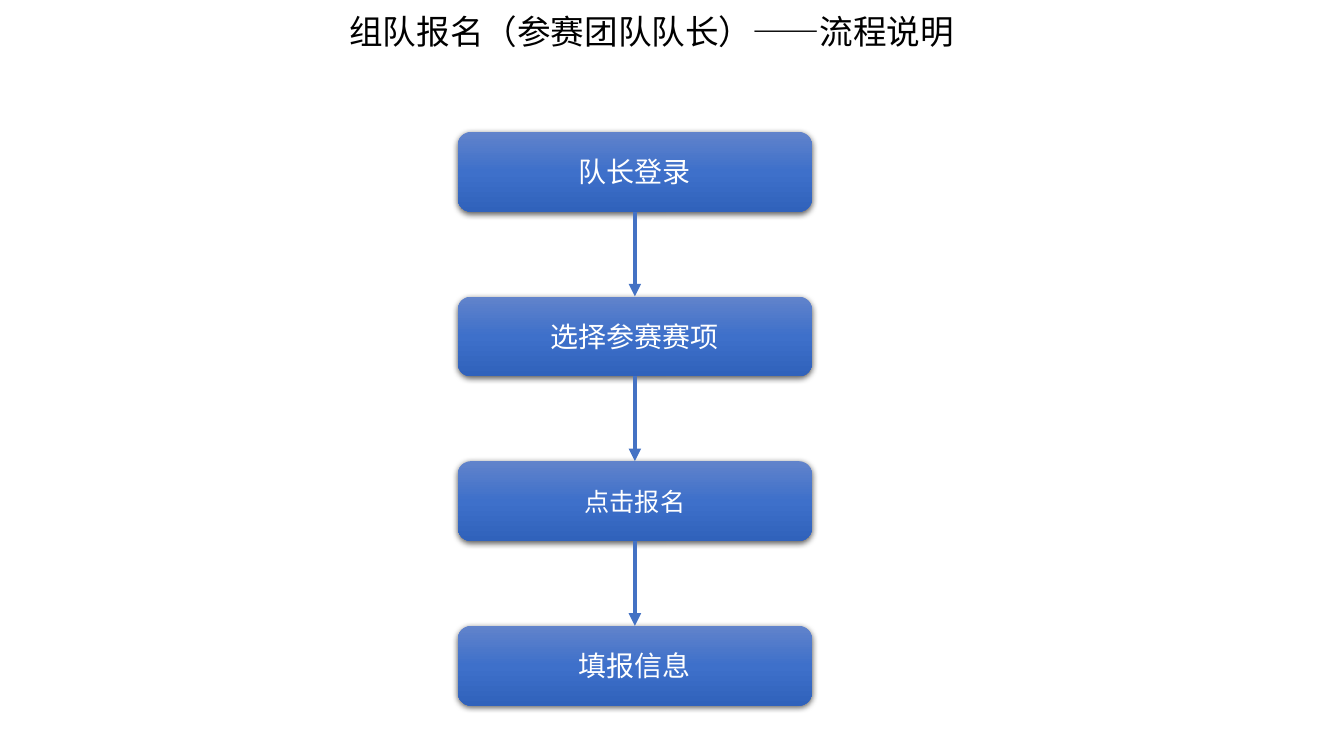
import copy
from dataclasses import dataclass

import pptx
import pptx.dml.color
import pptx.enum.shapes
import pptx.enum.text
import pptx.oxml
import pptx.oxml.ns
import pptx.util
from lxml import etree

Pt = pptx.util.Pt
qn = pptx.oxml.ns.qn


@dataclass(frozen=True)
class Theme:
    """Colours, font and type sizes of the slide."""
    font: str = "Noto Sans CJK SC"
    ink: str = "000000"
    white: str = "FFFFFF"
    line: str = "4472C4"
    shade: tuple = ((0, "6183CB"), (0.5, "3E70CA"), (1, "3062BB"))
    title: int = 24
    step: int = 20
    small: int = 18


THEME = Theme()
TITLE = "组队报名（参赛团队队长）——流程说明"
STEPS = (
    ("队长登录", THEME.step),
    ("选择参赛赛项", THEME.step),
    ("点击报名", THEME.small),
    ("填报信息", THEME.step),
)
LEFT, TOP, WIDTH, HEIGHT, PITCH = 327, 94.2, 253, 57, 117.6


def rgb(code):
    """Turn a hex code into a colour."""
    return pptx.dml.color.RGBColor.from_string(code)


def write(shape, text, size, color, anchor):
    """Put one centred line of text into a shape."""
    frame = shape.text_frame
    frame.word_wrap = True
    frame.auto_size = pptx.enum.text.MSO_AUTO_SIZE.NONE
    frame.vertical_anchor = anchor
    para = frame.paragraphs[0]
    para.alignment = pptx.enum.text.PP_ALIGN.CENTER
    run = para.add_run()
    run.text = text
    run.font.size = Pt(size)
    run.font.name = THEME.font
    run.font.color.rgb = rgb(color)
    east = etree.SubElement(run.font._element, qn("a:ea"))
    east.set("typeface", THEME.font)


def shade(shape):
    """Fill a shape with the downward gradient."""
    fill = shape.fill
    fill.gradient()
    fill.gradient_angle = 270
    stops = shape._element.spPr.find(qn("a:gradFill")).find(qn("a:gsLst"))
    stops.append(copy.deepcopy(stops[0]))
    for stop, (place, code) in zip(fill.gradient_stops, THEME.shade):
        stop.position = place
        stop.color.rgb = rgb(code)


def cast(shape):
    """Give a shape a soft shadow below it."""
    shape.shadow.inherit = False
    glow = shape._element.spPr.find(qn("a:effectLst"))
    drop = etree.SubElement(
        glow, qn("a:outerShdw"), blurRad=str(Pt(4.5)), dist=str(Pt(1.5)),
        dir="5400000", algn="ctr", rotWithShape="0")
    tone = etree.SubElement(drop, qn("a:srgbClr"), val=THEME.ink)
    etree.SubElement(tone, qn("a:alpha"), val="63000")


def add_step(slide, row, text, size):
    """Draw one step of the flow."""
    kind = pptx.enum.shapes.MSO_SHAPE.ROUNDED_RECTANGLE
    box = slide.shapes.add_shape(
        kind, Pt(LEFT), Pt(TOP + row * PITCH), Pt(WIDTH), Pt(HEIGHT))
    shade(box)
    box.line.fill.background()
    cast(box)
    write(box, text, size=size, color=THEME.white,
          anchor=pptx.enum.text.MSO_ANCHOR.MIDDLE)
    return box


def add_arrow(slide, start, end):
    """Join the bottom of one step to the top of the next."""
    kind = pptx.enum.shapes.MSO_CONNECTOR.STRAIGHT
    arrow = slide.shapes.add_connector(kind, 0, 0, 0, 0)
    arrow.begin_connect(start, 2)
    arrow.end_connect(end, 0)
    arrow.line.color.rgb = rgb(THEME.line)
    arrow.line.width = Pt(3)
    etree.SubElement(arrow.line._get_or_add_ln(), qn("a:tailEnd"),
                     type="triangle")
    etree.SubElement(arrow._element.spPr, qn("a:effectLst"))


def add_title(slide):
    """Place and fill the title."""
    title = slide.shapes.title
    title.left, title.top = Pt(38), Pt(4.5)
    title.width, title.height = Pt(855), Pt(36)
    write(title, TITLE, size=THEME.title, color=THEME.ink,
          anchor=pptx.enum.text.MSO_ANCHOR.TOP)


def main():
    """Build the slide and save it."""
    deck = pptx.Presentation()
    deck.slide_width, deck.slide_height = Pt(960), Pt(540)
    slide = deck.slides.add_slide(deck.slide_layouts[5])
    add_title(slide)
    boxes = [add_step(slide, row, text, size)
             for row, (text, size) in enumerate(STEPS)]
    for start, end in zip(boxes, boxes[1:]):
        add_arrow(slide, start, end)
    deck.save("out.pptx")


if __name__ == "__main__":
    main()
